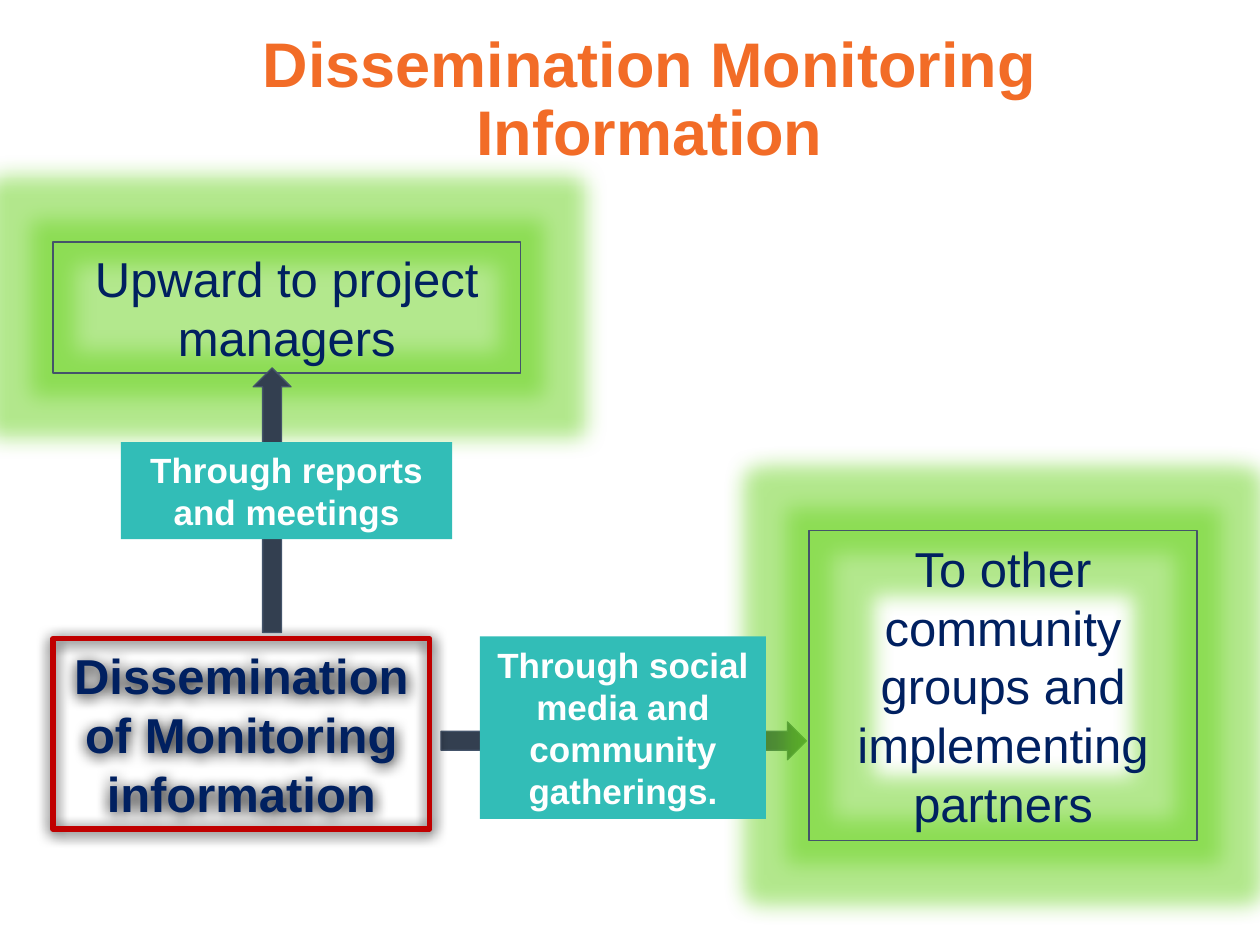
from dataclasses import dataclass

import pptx
import pptx.dml.color
import pptx.enum.shapes
import pptx.enum.text
import pptx.oxml
import pptx.oxml.ns
import pptx.util
from pptx.util import Inches

COLORS = {
    "title": "F26C27", "text": "002060", "label_text": "FFFFFF", "label": "32BDB7",
    "arrow": "333F50", "outline": "44546A", "source": "C00000",
    "glow": "67D21C", "shadow": "000000",
}
FONT = "Arial"
SHAPE = pptx.enum.shapes.MSO_SHAPE
CENTER = pptx.enum.text.PP_ALIGN.CENTER
MIDDLE = pptx.enum.text.MSO_ANCHOR.MIDDLE
GROW = pptx.enum.text.MSO_AUTO_SIZE.SHAPE_TO_FIT_TEXT

GLOW = '<a:glow {ns} rad="{size}"><a:srgbClr val="{color}"><a:alpha val="50000"/></a:srgbClr></a:glow>'
SHADOW = ('<a:outerShdw {ns} blurRad="{size}" dist="12700" dir="5400000" algn="ctr" rotWithShape="0">'
          '<a:srgbClr val="{color}"/></a:outerShdw>')


@dataclass
class Box:
    text: str
    left: float
    top: float
    width: float
    height: float
    size: int = 28
    bold: bool = False
    color: str = "text"
    fill: str | None = None
    line: str | None = None
    line_width: float = 0.75
    effect: str | None = None
    effect_color: str = "glow"
    effect_size: float = 25


@dataclass
class Arrow:
    left: float
    top: float
    width: float
    height: float = 0.3
    rotation: int = 0


def rgb(name: str) -> pptx.dml.color.RGBColor:
    return pptx.dml.color.RGBColor.from_string(COLORS[name])


def style_text(tf, text: str, size: int, bold: bool, color: str) -> None:
    tf.word_wrap = True
    tf.vertical_anchor = MIDDLE
    p = tf.paragraphs[0]
    p.text = text
    p.alignment = CENTER
    p.font.name = FONT
    p.font.size = pptx.util.Pt(size)
    p.font.bold = bold
    p.font.color.rgb = rgb(color)


def add_shape(s, kind, part: Box | Arrow, fill: str | None, line: str | None, width: float):
    sp = s.shapes.add_shape(kind, Inches(part.left), Inches(part.top),
                            Inches(part.width), Inches(part.height))
    sp.shadow.inherit = False
    if fill:
        sp.fill.solid()
        sp.fill.fore_color.rgb = rgb(fill)
    else:
        sp.fill.background()
    if line:
        sp.line.color.rgb = rgb(line)
        sp.line.width = pptx.util.Pt(width)
    else:
        sp.line.fill.background()
    return sp


def add_box(s, box: Box) -> None:
    sp = add_shape(s, SHAPE.RECTANGLE, box, box.fill, box.line, box.line_width)
    style_text(sp.text_frame, box.text, box.size, box.bold, box.color)
    sp.text_frame.auto_size = GROW
    if box.effect:
        effects = sp.element.spPr.find(pptx.oxml.ns.qn("a:effectLst"))
        effects.append(pptx.oxml.parse_xml(box.effect.format(
            ns=pptx.oxml.ns.nsdecls("a"), size=pptx.util.Pt(box.effect_size),
            color=COLORS[box.effect_color])))


def add_arrow(s, arrow: Arrow) -> None:
    sp = add_shape(s, SHAPE.RIGHT_ARROW, arrow, "arrow", "outline", 0.75)
    sp.rotation = arrow.rotation


def label(text: str, left: float, top: float, width: float, height: float) -> Box:
    return Box(text, left, top, width, height, size=20, bold=True,
               color="label_text", fill="label")


def audience(text: str, left: float, top: float, width: float, height: float) -> Box:
    return Box(text, left, top, width, height, line="outline", effect=GLOW)


# Parts from back to front
PARTS = [
    Arrow(3.5, 5.73, 2.9),
    Box("Dissemination of Monitoring information", 0.42, 5.07, 2.99, 1.51, bold=True,
        line="source", line_width=3, effect=SHADOW, effect_color="shadow", effect_size=8.5),
    audience("Upward to project managers", 0.42, 1.92, 3.71, 1.04),
    audience("To other community groups and implementing partners", 6.42, 4.21, 3.08, 2.46),
    label("Through social media and community gatherings.", 3.81, 5.05, 2.27, 1.45),
    Arrow(1.11, 3.82, 2.1, rotation=270),
    label("Through reports and meetings", 0.96, 3.51, 2.63, 0.77),
]


def main() -> None:
    prs = pptx.Presentation()
    prs.slide_width, prs.slide_height = Inches(10), Inches(7.5)
    s = prs.slides.add_slide(prs.slide_layouts[5])

    # Title
    title = s.shapes.title
    title.left, title.top = Inches(0.58), Inches(0.08)
    title.width, title.height = Inches(9.15), Inches(1.45)
    style_text(title.text_frame, "Dissemination Monitoring Information", 36, True, "title")
    title.text_frame.paragraphs[0].line_spacing = 0.9

    # Diagram
    for part in PARTS:
        if isinstance(part, Arrow):
            add_arrow(s, part)
        else:
            add_box(s, part)

    prs.save("out.pptx")


if __name__ == "__main__":
    main()
